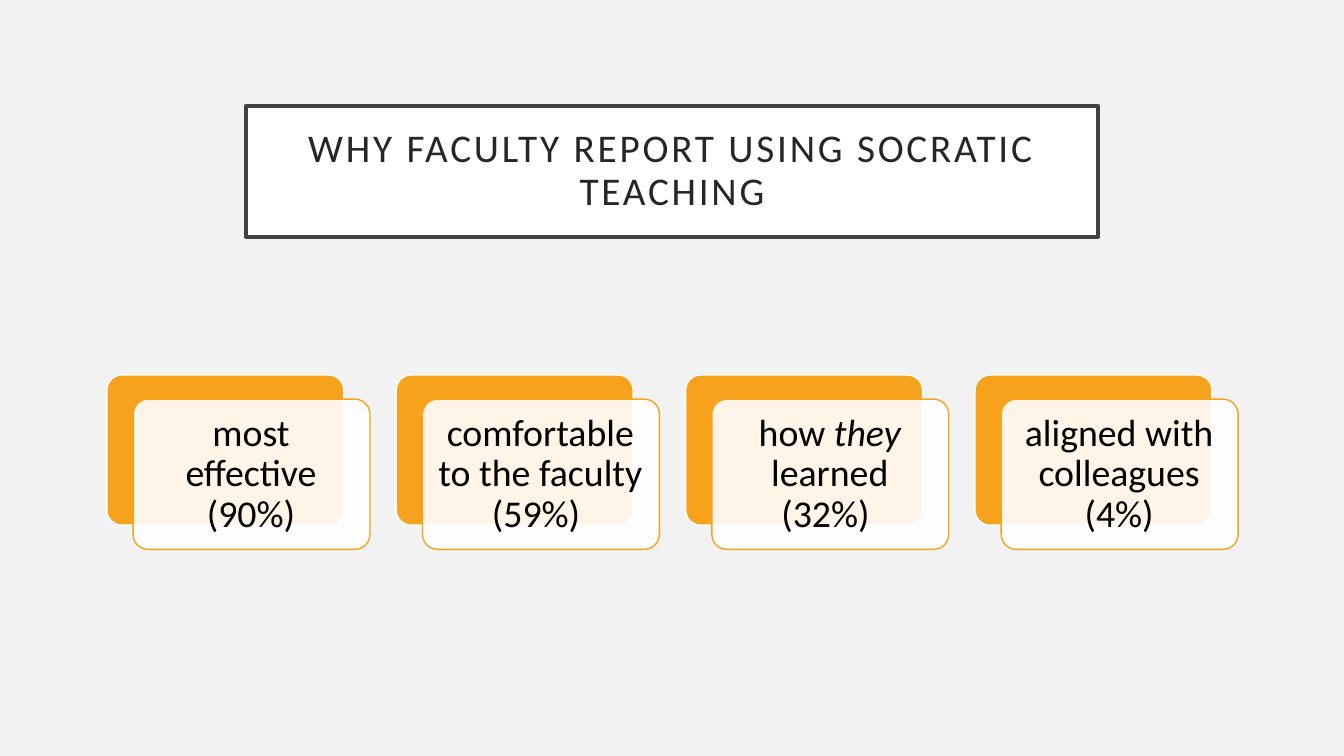
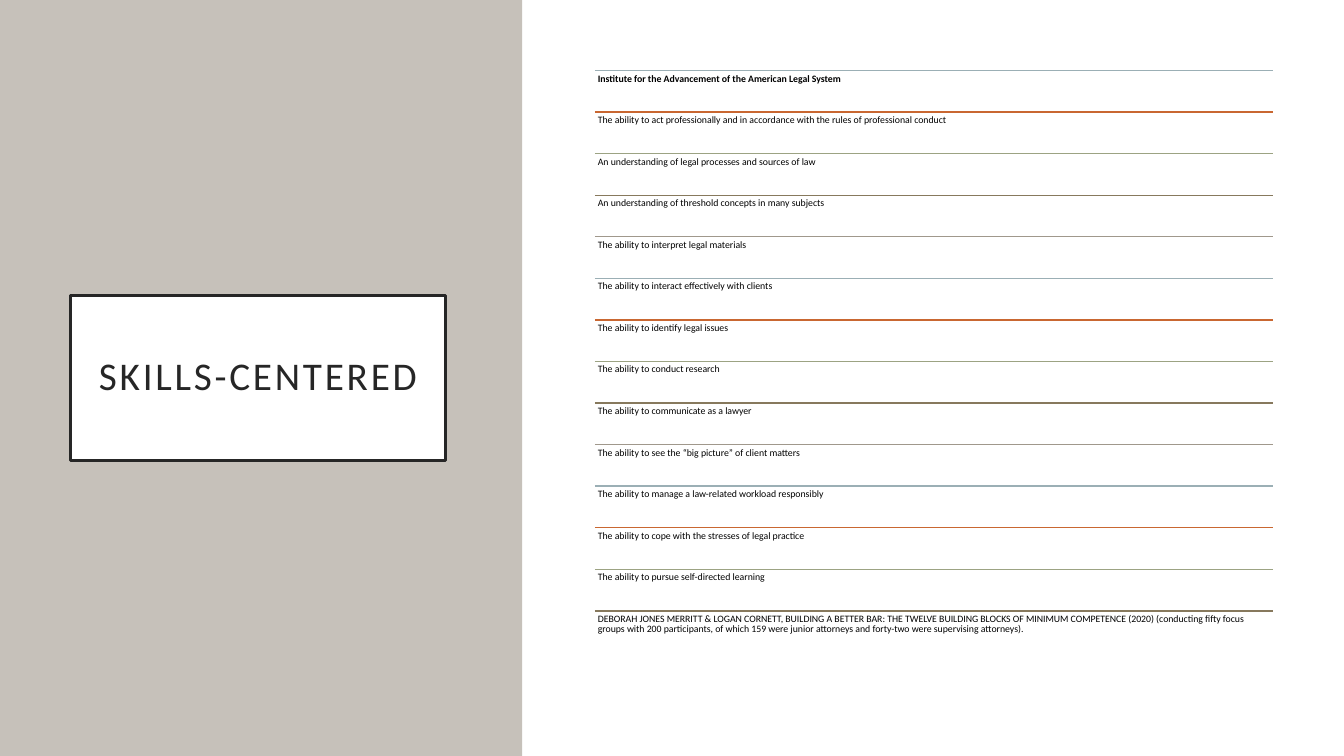
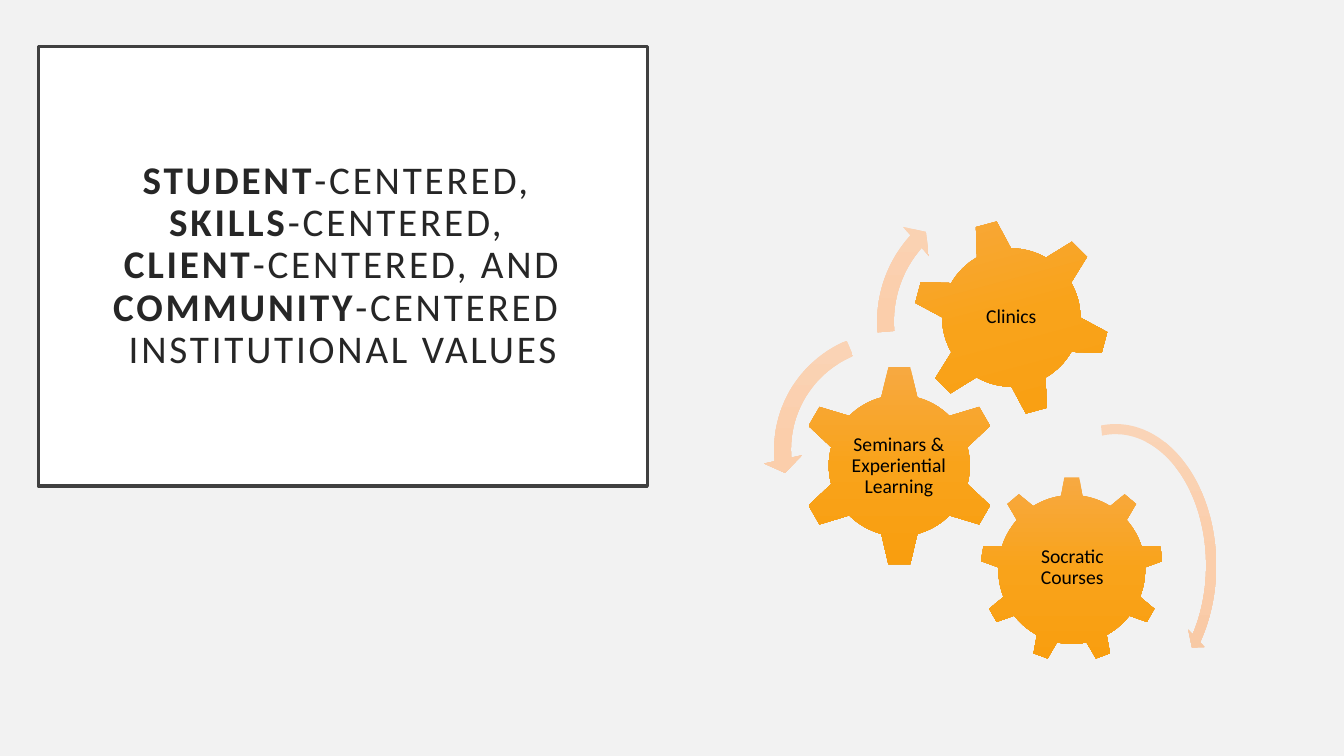
import copy

import lxml.etree
import pptx
import pptx.dml.color
import pptx.enum.dml
import pptx.enum.shapes
import pptx.enum.text
import pptx.oxml.ns
import pptx.util

Inches = pptx.util.Inches
Pt = pptx.util.Pt
SHAPE = pptx.enum.shapes.MSO_SHAPE
ALIGN = pptx.enum.text.PP_ALIGN
ANCHOR = pptx.enum.text.MSO_ANCHOR
qn = pptx.oxml.ns.qn

# Shared look
COLORS = {
    "page": "F2F2F2", "white": "FFFFFF", "black": "000000",
    "title": "262626", "frame": "404040", "panel": "C6C1BA",
    "orange": "F6A21D",
}
RULE_COLORS = ["9BAFB5", "C96731", "9CA383", "87795D", "A0988C"]
GEAR_GRADIENT = ["F7A942", "F9A31A", "F99E0F"]
ARROW_GRADIENT = ["FAD4B7", "FBCEAB", "F5C59F"]
FONT = "Calibri"
TITLE_FONT = {"name": FONT, "size": Pt(28)}

REASONS = [
    [("most effective (90%)", {})],
    [("comfortable to the faculty (59%) ", {})],
    [("how ", {}), ("they ", {"italic": True}), ("learned (32%) ", {})],
    [("aligned with colleagues (4%)", {})],
]
SKILLS = [
    "Institute for the Advancement of the American Legal System",
    "The ability to act professionally and in accordance with the rules of professional conduct",
    "An understanding of legal processes and sources of law",
    "An understanding of threshold concepts in many subjects",
    "The ability to interpret legal materials",
    "The ability to interact effectively with clients",
    "The ability to identify legal issues",
    "The ability to conduct research",
    "The ability to communicate as a lawyer",
    "The ability to see the “big picture” of client matters",
    "The ability to manage a law-related workload responsibly",
    "The ability to cope with the stresses of legal practice",
    "The ability to pursue self-directed learning",
    "DEBORAH JONES MERRITT & LOGAN CORNETT, BUILDING A BETTER BAR: THE TWELVE "
    "BUILDING BLOCKS OF MINIMUM COMPETENCE (2020) (conducting fifty focus groups with "
    "200 participants, of which 159 were junior attorneys and forty-two were "
    "supervising attorneys).",
]
VALUES = [
    ("STUDENT", {"bold": True}), ("-CENTERED, \n", {}),
    ("SKILLS", {"bold": True}), ("-CENTERED, \n", {}),
    ("CLIENT", {"bold": True}), ("-CENTERED, AND\n", {}),
    ("COMMUNITY", {"bold": True}), ("-CENTERED \nINSTITUTIONAL VALUES", {}),
]
# Gear: preset, box, rotation, label, label box
GEARS = [
    (SHAPE.GEAR_9, (9.72, 4.73, 1.82, 1.84), 0,
     "Socratic Courses", (10.09, 5.16, 1.09, 0.95)),
    (SHAPE.GEAR_6, (7.92, 3.62, 2, 2), 0,
     "Seminars & Experiential Learning", (8.42, 4.13, 0.99, 0.99)),
    (SHAPE.GEAR_6, (9.05, 2.17, 1.96, 1.96), 345,
     "Clinics", (9.48, 2.6, 1.1, 1.1)),
]
# Arrow: preset, box, adjustments
ARROWS = [
    (SHAPE.CIRCULAR_ARROW, (10, 4.14, 2.13, 2.94),
     (0.047, 2.99, 25.245, 158.434, 0.055)),
    (SHAPE.LEFT_CIRCULAR_ARROW, (7.57, 3.18, 2.56, 2.56),
     (0.065, 4.3, 104.891, 148.378, 0.075)),
    (SHAPE.CIRCULAR_ARROW, (8.59, 1.81, 2.76, 2.76),
     (0.06, 3.941, 133.138, 105.082, 0.07)),
]


def rgb(color):
    return pptx.dml.color.RGBColor.from_string(color)


def set_attributes(target, values):
    for name, value in values.items():
        setattr(target, name, value)


def add_slide(presentation, background):
    slide = presentation.slides.add_slide(presentation.slide_layouts[5])
    slide.background.fill.solid()
    slide.background.fill.fore_color.rgb = rgb(background)
    return slide


def paint(shape, fill, line=None, width=1):
    shape.fill.solid()
    shape.fill.fore_color.rgb = rgb(fill)
    if line:
        shape.line.color.rgb = rgb(line)
        shape.line.width = Pt(width)
    else:
        shape.line.fill.background()


def paint_gradient(shape, colors):
    """Spread the colours evenly from top to bottom."""
    shape.fill.gradient()
    shape.fill.gradient_angle = 270
    stop_list = shape._element.xpath(".//a:gsLst")[0]
    stop_list.insert(1, copy.deepcopy(stop_list[0]))
    for index, (stop, color) in enumerate(zip(shape.fill.gradient_stops, colors)):
        stop.position = index / (len(colors) - 1)
        stop.color.rgb = rgb(color)
    shape.line.fill.background()


def set_opacity(shape, percent):
    color = shape._element.spPr.find(qn("a:solidFill"))[0]
    lxml.etree.SubElement(color, qn("a:alpha")).set("val", str(percent * 1000))


def add_preset(slide, preset, box, adjustments=()):
    shape = slide.shapes.add_shape(preset, *map(Inches, box))
    shape.shadow.inherit = False
    for index, value in enumerate(adjustments):
        shape.adjustments[index] = value
    return shape


def write_text(shape, runs, font, color, inset, anchor, align, spacing=0):
    """Fill one paragraph with (text, format) runs; \\n breaks a line."""
    frame = shape.text_frame
    margins = dict.fromkeys(
        ["margin_left", "margin_top", "margin_right", "margin_bottom"], Inches(inset))
    set_attributes(frame, {
        **margins, "word_wrap": True, "vertical_anchor": anchor,
        "auto_size": pptx.enum.text.MSO_AUTO_SIZE.NONE,
    })
    paragraph = frame.paragraphs[0]
    set_attributes(paragraph, {"alignment": align, "line_spacing": 0.9})
    for text, changes in runs:
        for index, part in enumerate(text.split("\n")):
            if index:
                paragraph.add_line_break()
                paragraph._p[-1].append(copy.deepcopy(run._r.rPr))
            if not part:
                continue
            run = paragraph.add_run()
            run.text = part
            set_attributes(run.font, {**font, **changes})
            run.font.color.rgb = rgb(color)
            if spacing:
                run._r.rPr.set("spc", str(spacing * 100))


def add_label(slide, box, runs, size, inset, anchor=ANCHOR.MIDDLE, align=ALIGN.CENTER):
    label = slide.shapes.add_textbox(*map(Inches, box))
    write_text(label, runs, {"name": FONT, "size": Pt(size)}, COLORS["black"],
               inset, anchor, align)


def add_title(slide, box, runs, frame_color):
    title = slide.shapes.title
    # Bring the title in front of what is already drawn
    slide.shapes._spTree.append(title._element)
    set_attributes(title, dict(zip(("left", "top", "width", "height"), map(Inches, box))))
    paint(title, COLORS["white"], frame_color, 2.5)
    write_text(title, runs, TITLE_FONT, COLORS["title"], 0.2,
               ANCHOR.MIDDLE, ALIGN.CENTER, spacing=2)


def add_rule(slide, left, right, top, color):
    rule = slide.shapes.add_connector(
        pptx.enum.shapes.MSO_CONNECTOR.STRAIGHT,
        *map(Inches, (left, top, right, top)))
    rule.line.color.rgb = rgb(color)
    rule.line.width = Pt(1)
    lxml.etree.SubElement(rule._element.spPr, qn("a:effectLst"))


def add_card(slide, left, top, runs):
    """Orange card with a translucent white card over it."""
    width, height = 2.35, 1.49
    back = add_preset(slide, SHAPE.ROUNDED_RECTANGLE, (left, top, width, height), [0.1])
    paint(back, COLORS["orange"], COLORS["white"])
    left, top = left + 0.26, top + 0.24
    front = add_preset(slide, SHAPE.ROUNDED_RECTANGLE, (left, top, width, height), [0.1])
    paint(front, COLORS["white"], COLORS["orange"])
    set_opacity(front, 90)
    add_label(slide, (left + 0.04, top + 0.05, 2.26, 1.4), runs, 27, 0.11)


def build_reasons(presentation):
    slide = add_slide(presentation, COLORS["page"])
    add_title(slide, (2.44, 1.05, 8.45, 1.3),
              [("WHY FACULTY REPORT USING SOCRATIC TEACHING", {})], COLORS["frame"])
    for index, runs in enumerate(REASONS):
        add_card(slide, 1.06 + 2.87 * index, 3.72, runs)


def build_skills(presentation):
    slide = add_slide(presentation, COLORS["white"])
    side_panel = add_preset(slide, SHAPE.RECTANGLE, (0, 0, 5.18, 7.5))
    paint(side_panel, COLORS["panel"])
    add_title(slide, (0.7, 2.93, 3.72, 1.64), [("SKILLS-CENTERED", {})], COLORS["title"])
    list_panel = add_preset(slide, SHAPE.RECTANGLE, (5.2, 0, 8.14, 7.5))
    paint(list_panel, COLORS["white"])
    # Ruled list, first row bold
    left, width, first, last = 5.9, 6.73, 0.7, 6.06
    pitch = (last - first) / (len(SKILLS) - 1)
    for index, text in enumerate(SKILLS):
        top = first + pitch * index
        add_rule(slide, left, left + width, top, RULE_COLORS[index % len(RULE_COLORS)])
        changes = {"bold": True} if index == 0 else {}
        add_label(slide, (left, top, width, pitch), [(text, changes)], 7, 0.03,
                  ANCHOR.TOP, ALIGN.LEFT)


def build_values(presentation):
    slide = add_slide(presentation, COLORS["page"])
    add_title(slide, (0.38, 0.46, 6.04, 4.36), VALUES, COLORS["frame"])
    for preset, box, rotation, text, label_box in GEARS:
        gear = add_preset(slide, preset, box)
        gear.rotation = rotation
        paint_gradient(gear, GEAR_GRADIENT)
        add_label(slide, label_box, [(text, {})], 14, 0.02)
    for preset, box, adjustments in ARROWS:
        arrow = add_preset(slide, preset, box, adjustments)
        paint_gradient(arrow, ARROW_GRADIENT)


def main():
    presentation = pptx.Presentation()
    presentation.slide_width = Inches(13.33)
    presentation.slide_height = Inches(7.5)
    build_reasons(presentation)
    build_skills(presentation)
    build_values(presentation)
    presentation.save("out.pptx")


if __name__ == "__main__":
    main()
